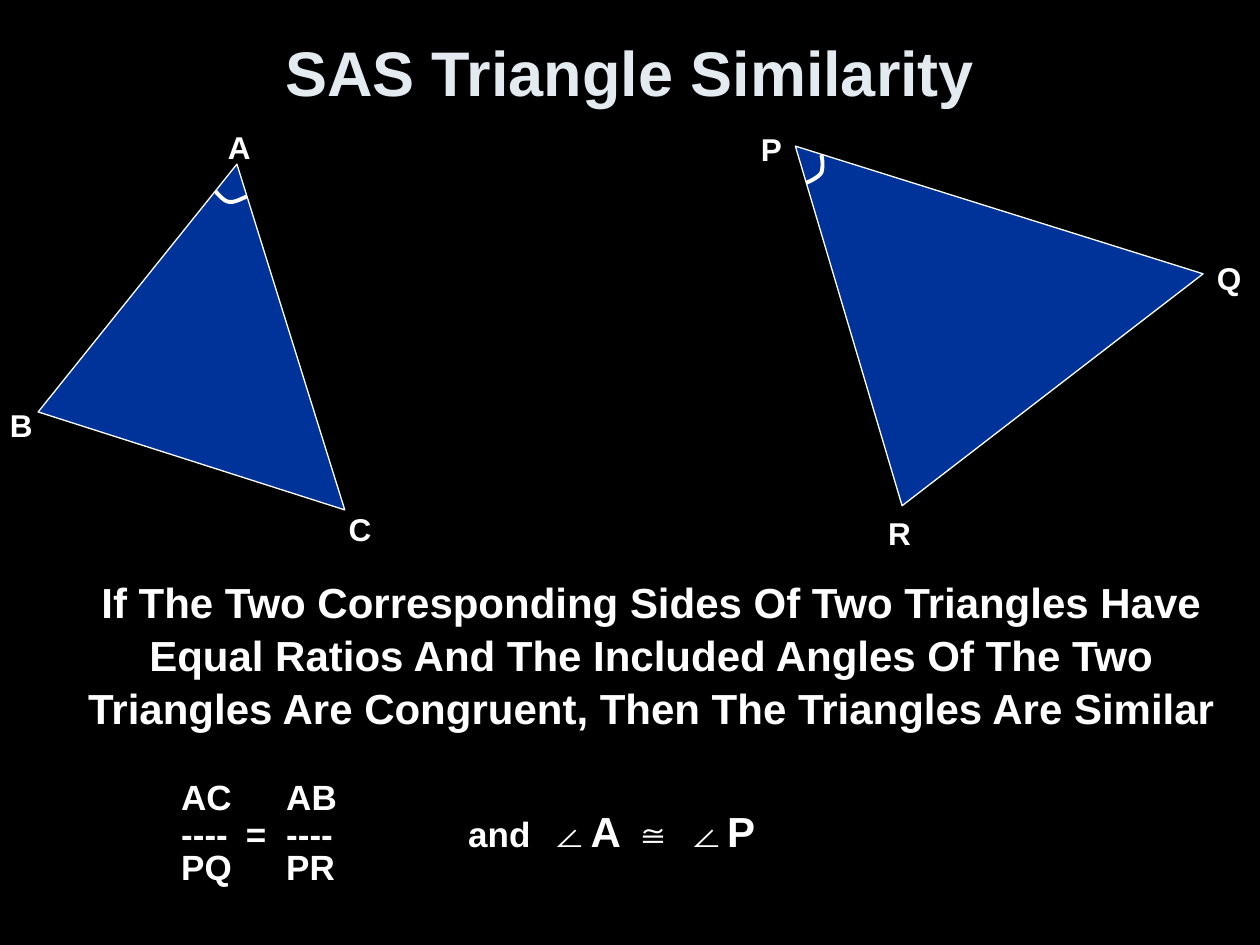
from dataclasses import dataclass

from lxml.etree import SubElement
from pptx import Presentation
from pptx.dml.color import RGBColor as Rgb
from pptx.enum.text import MSO_ANCHOR as Anchor, PP_ALIGN as Align
from pptx.oxml.ns import qn
from pptx.util import Pt


@dataclass(frozen=True)
class Theme:
    font: str = "Arial"
    background: Rgb = Rgb(0, 0, 0)
    title: Rgb = Rgb(0xE3, 0xEB, 0xF1)
    text: Rgb = Rgb(255, 255, 255)
    triangle: Rgb = Rgb(0, 0x33, 0x99)
    title_size: int = 36
    body_size: int = 24
    ratio_size: int = 20
    label_size: int = 18
    edge: float = 0.75
    arc: float = 2.25


class Board:
    """Holds the theme and the current slide."""

    def __init__(self, slide, theme):
        self.slide, self.theme = slide, theme
        fill = slide.background.fill
        fill.solid()
        fill.fore_color.rgb = theme.background

    def box(self, left, top, width, height, wrap=True, anchor=Anchor.TOP):
        shape = self.slide.shapes.add_textbox(*map(Pt, (left, top, width, height)))
        frame = shape.text_frame
        frame.word_wrap, frame.vertical_anchor = wrap, anchor
        return frame

    def add_text(self, paragraph, runs, color=None, tabs=(), **layout):
        """Fill a paragraph with (text, size) runs."""
        if tabs:
            tab_list = SubElement(paragraph._p.get_or_add_pPr(), qn("a:tabLst"))
            for stop in tabs:
                SubElement(tab_list, qn("a:tab"), pos=str(Pt(stop)), algn="l")
        for name, value in layout.items():
            setattr(paragraph, name, value)
        for text, size in runs:
            run = paragraph.add_run()
            run.text = text
            style = {"name": self.theme.font, "size": Pt(size), "bold": True}
            for name, value in style.items():
                setattr(run.font, name, value)
            run.font.color.rgb = color or self.theme.text

    def outline(self, points, weight, fill=None):
        """Draw a closed shape when a fill is given, else an open line."""
        start, *rest = [(Pt(x), Pt(y)) for x, y in points]
        builder = self.slide.shapes.build_freeform(*start)
        builder.add_line_segments(rest, close=fill is not None)
        shape = builder.convert_to_shape()
        shape.shadow.inherit = False
        if fill is None:
            shape.fill.background()
        else:
            shape.fill.solid()
            shape.fill.fore_color.rgb = fill
        shape.line.color.rgb = self.theme.text
        shape.line.width = Pt(weight)

    def angle_mark(self, controls, steps=10):
        """Draw chained cubic curves through the control points."""
        points = [controls[0]]
        for first in range(0, len(controls) - 1, 3):
            curve = controls[first:first + 4]
            for step in range(1, steps + 1):
                t = step / steps
                weights = ((1 - t) ** 3, 3 * t * (1 - t) ** 2, 3 * t * t * (1 - t), t ** 3)
                points.append(tuple(sum(w * p[axis] for w, p in zip(weights, curve))
                                    for axis in (0, 1)))
        self.outline(points, self.theme.arc)

    def label(self, letter, left, top):
        frame = self.box(left, top, 28, 29, wrap=False)
        self.add_text(frame.paragraphs[0], [(letter, self.theme.label_size)])

    def triangle(self, corners, labels, mark):
        self.outline(corners, self.theme.edge, self.theme.triangle)
        for letter, place in labels.items():
            self.label(letter, *place)
        self.angle_mark(mark)


def main():
    deck = Presentation()
    deck.slide_width, deck.slide_height = Pt(720), Pt(540)
    theme = Theme()
    board = Board(deck.slides.add_slide(deck.slide_layouts[6]), theme)

    # Title
    title = board.box(36, 7.5, 648, 67, anchor=Anchor.MIDDLE)
    board.add_text(title.paragraphs[0], [("SAS Triangle Similarity", theme.title_size)],
                   theme.title, alignment=Align.CENTER)

    # Theorem
    theorem = board.box(24.5, 324.7, 695.5, 211)
    board.add_text(
        theorem.paragraphs[0],
        [("If The Two Corresponding Sides Of Two Triangles Have Equal Ratios And "
          "The Included Angles Of The Two Triangles Are Congruent, Then The "
          "Triangles Are Similar", theme.body_size)],
        alignment=Align.CENTER, line_spacing=1.05)

    # Equal ratios and congruent angles, set in shared columns
    columns = (72, 109, 132, 236, 282, 330, 360)
    small, large = theme.ratio_size, theme.body_size
    ratio_rows = [
        ([("\tAC\t\tAB", small)], 30),
        ([("\t----\t=\t----\tand", small), ("\t∠A\t≅\t∠P", large)], 0),
        ([("\tPQ\t\tPR", small)], 0),
    ]
    for runs, gap in ratio_rows:
        board.add_text(theorem.add_paragraph(), runs, tabs=columns,
                       line_spacing=0.75, space_before=Pt(gap))

    # Triangle PQR
    board.triangle(
        [(454.5, 83.5), (687.5, 156.5), (515.5, 289)],
        {"P": (427.7, 70.6), "Q": (688.3, 144.7), "R": (500.4, 290.2)},
        [(460.8, 104.4), (464.4, 103), (468, 100.8), (469.4, 98.6),
         (470.2, 95.8), (470.2, 92.2), (469.4, 88.6)])

    # Triangle ABC
    board.triangle(
        [(135.4, 93.8), (21.8, 235.4), (197, 291.4)],
        {"A": (123.1, 69.8), "B": (-1.4, 228.2), "C": (192.2, 287.6)},
        [(123.1, 109.4), (126, 112.3), (128.2, 115.2), (131, 115.4),
         (133.9, 115.9), (137.5, 113.8), (141.1, 112.3)])

    deck.save("out.pptx")


if __name__ == "__main__":
    main()
